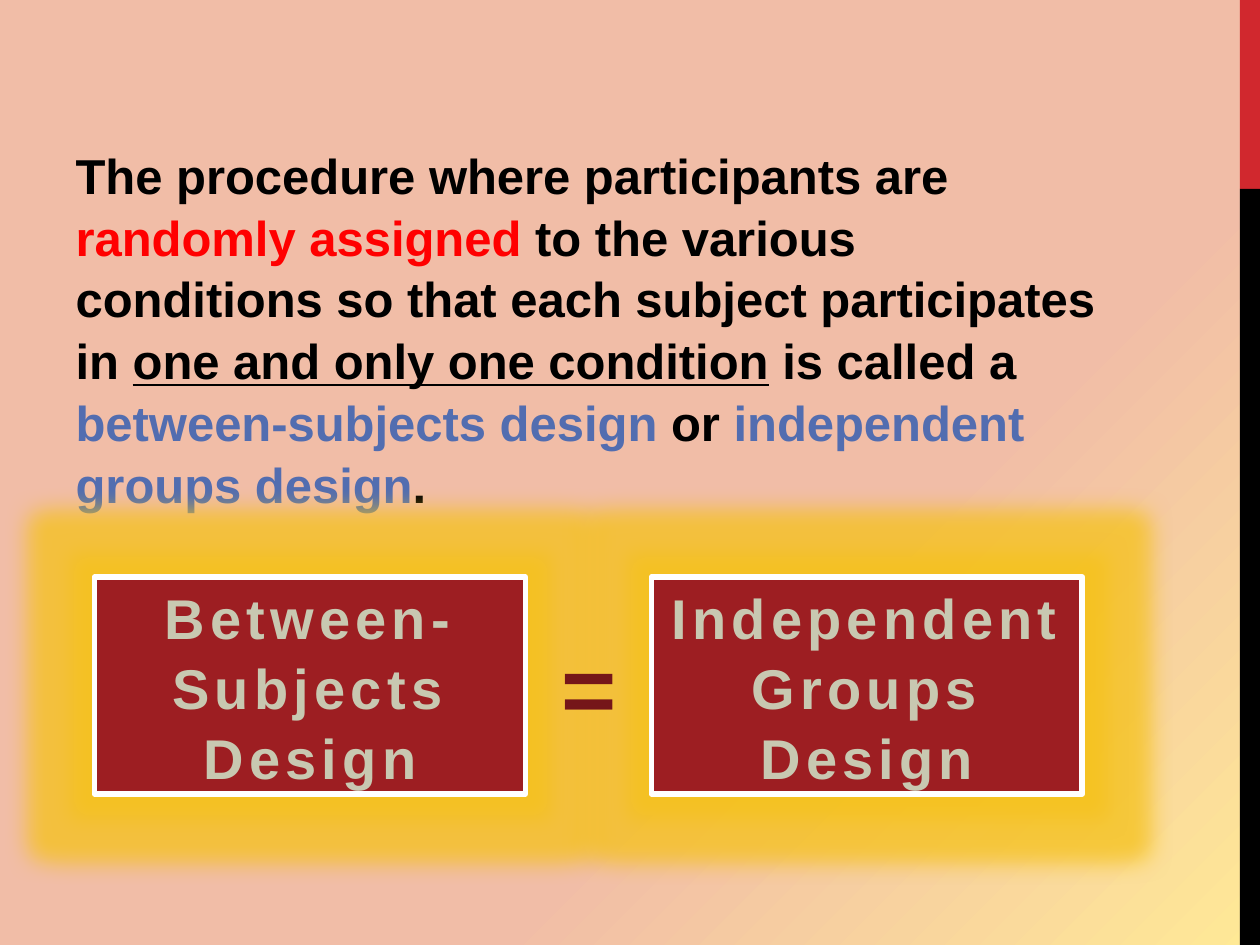
import dataclasses

import pptx
import pptx.dml.color
import pptx.enum.shapes
import pptx.enum.text
import pptx.oxml
import pptx.oxml.ns
import pptx.util

Inches = pptx.util.Inches
Pt = pptx.util.Pt
RECT = pptx.enum.shapes.MSO_SHAPE.RECTANGLE
CENTER = pptx.enum.text.PP_ALIGN.CENTER
FIT = pptx.enum.text.MSO_AUTO_SIZE
TOP = pptx.enum.text.MSO_ANCHOR.TOP

HUES = {
    "peach": "F1BDA7", "cream": "FFE996", "red": "D1282E", "black": "000000",
    "bright": "FF0000", "blue": "526DB0", "brick": "9D1E22", "white": "FFFFFF",
    "stone": "C8C8B1", "maroon": "751619", "glow": "F5C21B",
}


@dataclasses.dataclass
class Panel:
    left: float
    top: float
    wide: float
    high: float
    hue: str
    text: str = ""


@dataclasses.dataclass
class Span:
    text: str
    hue: str = "black"
    line: bool = False


BARS = [
    Panel(9.84, 0, 0.16, 1.5, "red"),
    Panel(9.84, 1.5, 0.16, 6, "black"),
]
TERMS = [
    Panel(0.75, 4.58, 3.42, 1.72, "brick", "Between-Subjects Design"),
    Panel(5.17, 4.58, 3.42, 1.72, "brick", "Independent Groups Design"),
]
SPANS = [
    Span("The procedure where participants are "),
    Span("randomly assigned ", "bright"),
    Span("to the various conditions so that each subject participates in "),
    Span("one and only one condition", line=True),
    Span(" is called a "),
    Span("between-subjects design ", "blue"),
    Span("or "),
    Span("independent groups design", "blue"),
    Span("."),
]


def color(name: str) -> pptx.dml.color.RGBColor:
    return pptx.dml.color.RGBColor.from_string(HUES[name])


def node(body: str):
    """Parse one DrawingML element, given without its prefix."""
    space = pptx.oxml.ns.nsdecls("a")
    tag, rest = body.split(">", 1)
    gap = "/" if tag.endswith("/") else ""
    return pptx.oxml.parse_xml(f"<a:{tag.rstrip('/')} {space}{gap}>{rest}")


def add_run(para, text: str, size: float, hue: str, space: float = 0):
    run = para.add_run()
    run.text = text
    font = run.font
    font.name, font.size, font.bold = "Arial", Pt(size), True
    font.color.rgb = color(hue)
    if space:
        run._r.get_or_add_rPr().set("spc", str(int(space * 100)))
    return run


def add_panel(slide, item: Panel):
    shape = slide.shapes.add_shape(
        RECT, Inches(item.left), Inches(item.top), Inches(item.wide), Inches(item.high))
    shape.shadow.inherit = False
    shape.fill.solid()
    shape.fill.fore_color.rgb = color(item.hue)
    shape.line.fill.background()
    return shape


def add_term(slide, item: Panel) -> None:
    shape = add_panel(slide, item)
    shape.line.color.rgb = color("white")
    shape.line.width = Pt(3.25)
    # Soft halo
    effects = shape._element.spPr.find(pptx.oxml.ns.qn("a:effectLst"))
    effects.append(node(
        f'glow rad="{Inches(0.35)}"><a:srgbClr val="{HUES["glow"]}">'
        '<a:alpha val="75000"/></a:srgbClr></a:glow>'))
    # Label
    frame = shape.text_frame
    frame.word_wrap = True
    frame.auto_size = FIT.SHAPE_TO_FIT_TEXT
    para = frame.paragraphs[0]
    para.alignment = CENTER
    para.line_spacing = 1.04
    run = add_run(para, item.text, 32, "stone", 3)
    run._r.get_or_add_rPr().insert(0, node(
        f'ln w="{Pt(0.9)}"><a:solidFill><a:srgbClr val="{HUES["stone"]}"/>'
        '</a:solidFill></a:ln>'))


def fill_body(body) -> None:
    body.left, body.top = Inches(0.5), Inches(1.08)
    body.width, body.height = Inches(8.33), Inches(5.62)
    frame = body.text_frame
    frame.word_wrap = True
    frame.auto_size = FIT.NONE
    frame.vertical_anchor = TOP
    para = frame.paragraphs[0]
    para.line_spacing = 1.05
    para.space_before, para.space_after = Pt(0), Pt(6)
    props = para._p.get_or_add_pPr()
    props.set("marL", "0")
    props.set("indent", "0")
    props.append(node("buNone/>"))
    for span in SPANS:
        run = add_run(para, span.text, 28, span.hue)
        if span.line:
            run.font.underline = True


def add_sign(slide) -> None:
    box = slide.shapes.add_textbox(
        Inches(4.35), Inches(4.94), Inches(0.65), Inches(1.01))
    frame = box.text_frame
    frame.word_wrap = False
    frame.auto_size = FIT.SHAPE_TO_FIT_TEXT
    para = frame.paragraphs[0]
    para.alignment = CENTER
    add_run(para, "=", 54, "maroon", 0.5)


def main() -> None:
    deck = pptx.Presentation()
    deck.slide_width, deck.slide_height = Inches(10), Inches(7.5)
    slide = deck.slides.add_slide(deck.slide_layouts[1])
    title = slide.shapes.title._element
    title.getparent().remove(title)

    # Diagonal background
    fill = slide.background.fill
    fill.gradient()
    fill.gradient_angle = 315
    for stop, hue, pos in zip(fill.gradient_stops, ("peach", "cream"), (0.65, 1)):
        stop.color.rgb = color(hue)
        stop.position = pos

    # Side bars, definition, equation
    for bar in BARS:
        add_panel(slide, bar)
    fill_body(slide.placeholders[1])
    for term in TERMS:
        add_term(slide, term)
    add_sign(slide)
    deck.save("out.pptx")


if __name__ == "__main__":
    main()
